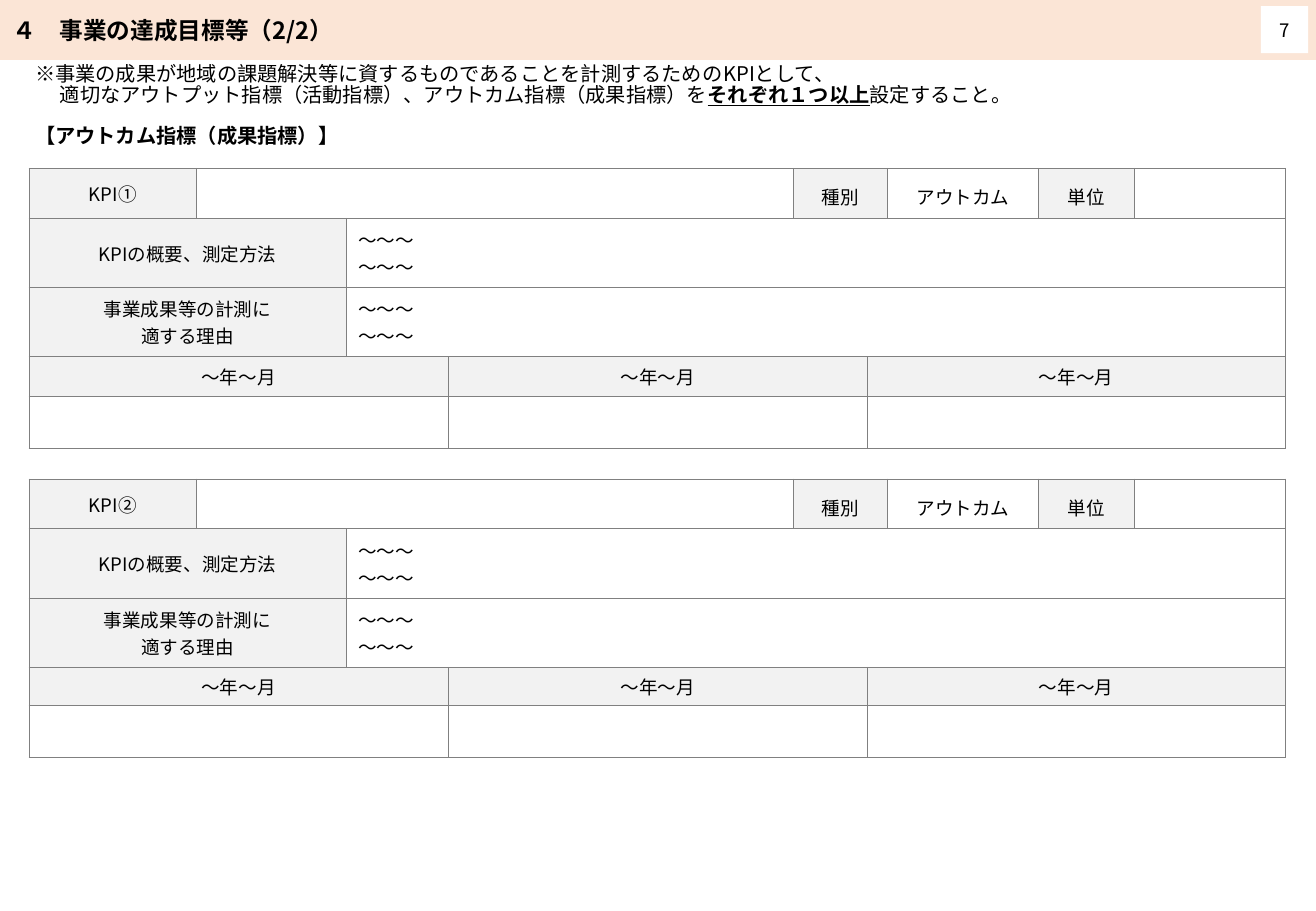
from lxml import etree
from pptx import Presentation
from pptx import util as u
from pptx.dml import color
from pptx.enum import shapes, text
from pptx.oxml import ns

Pt = u.Pt
MID = text.MSO_ANCHOR.MIDDLE
LEFT, CENTER = text.PP_ALIGN.LEFT, text.PP_ALIGN.CENTER
FONT, INK, GREY, RULE = "Noto Sans CJK JP", "000000", "F2F2F2", "808080"
COLS = [99.4, 88.6, 60.5, 204.5, 43.9, 12.2, 89.3, 56.9, 89.3]
WIDE = 745


def rgb(code):
    return color.RGBColor.from_string(code)


class Page:
    """Style and current slide."""

    def __init__(self, deck):
        self.slide = deck.slides.add_slide(deck.slide_layouts[5])

    def put(self, frame, lines, size, align=LEFT, space=None, bold=False):
        # Each line is a list of (words, marked) runs
        for i, line in enumerate(lines):
            para = frame.paragraphs[0] if i == 0 else frame.add_paragraph()
            para.alignment = align
            if space:
                para.line_spacing = space
            for words, mark in line:
                run = para.add_run()
                run.text = words
                font = run.font
                font.size, font.bold, font.underline = Pt(size), bold or mark, mark
                font.color.rgb = rgb(INK)
                font.name = FONT
                props = run._r.get_or_add_rPr()
                etree.SubElement(props, ns.qn("a:ea"), typeface=FONT)

    def title(self, words, w, h, fill):
        box = self.slide.shapes.title
        box.left, box.top, box.width, box.height = 0, 0, Pt(w), Pt(h)
        box.fill.solid()
        box.fill.fore_color.rgb = box.line.color.rgb = rgb(fill)
        box.line.width = Pt(1)
        box.text_frame.vertical_anchor = MID
        self.put(box.text_frame, [[(words, False)]], 14, bold=True)

    def note(self, top, h, lines, bold=False):
        box = self.slide.shapes.add_textbox(Pt(13.7), Pt(top), Pt(753), Pt(h))
        box.text_frame.word_wrap = True
        self.put(box.text_frame, lines, 12, space=0.85, bold=bold)
        return box

    def badge(self, words, x, y, side):
        box = self.slide.shapes.add_shape(
            shapes.MSO_SHAPE.RECTANGLE, Pt(x), Pt(y), Pt(side), Pt(side))
        box.shadow.inherit = False
        box.fill.solid()
        box.fill.fore_color.rgb = rgb("FFFFFF")
        box.line.fill.background()
        box.text_frame.vertical_anchor = MID
        self.put(box.text_frame, [[(words, False)]], 11, CENTER)

    def border(self, cell):
        props = cell._tc.get_or_add_tcPr()
        for i, side in enumerate(("lnL", "lnR", "lnT", "lnB")):
            line = etree.Element(ns.qn("a:" + side), w=str(Pt(0.5)))
            fill = etree.SubElement(line, ns.qn("a:solidFill"))
            etree.SubElement(fill, ns.qn("a:srgbClr"), val=RULE)
            props.insert(i, line)

    def table(self, top, rows, heights):
        grid = self.slide.shapes.add_table(
            len(rows), len(COLS), Pt(17.2), Pt(top), Pt(WIDE), Pt(sum(heights))).table
        grid.first_row = grid.horz_banding = False
        for col, w in zip(grid.columns, COLS):
            col.width = Pt(w)
        for row, h in zip(grid.rows, heights):
            row.height = Pt(h)
        for r, row in enumerate(rows):
            c = 0
            for span, lines, shade, align, space in row:
                cell = grid.cell(r, c)
                if span > 1:
                    cell.merge(grid.cell(r, c + span - 1))
                for part in range(c, c + span):
                    one = grid.cell(r, part)
                    one.fill.solid()
                    one.fill.fore_color.rgb = rgb(GREY if shade else "FFFFFF")
                    one.margin_top = one.margin_bottom = Pt(1)
                    self.border(one)
                cell.vertical_anchor = MID
                runs = [[(words, False)] for words in lines]
                self.put(cell.text_frame, runs, 11, align, space)
                c += span


def head(span, *lines, space=None):
    return span, lines, True, CENTER, space


def body(span, *lines, align=LEFT, space=None):
    return span, lines, False, align, space


def kpi(name):
    gap = Pt(20)
    thirds = (3, 2, 4)
    fill = "～～～"
    return [
        [head(1, name), body(3), head(2, "種別", space=gap),
         body(1, "アウトカム", align=CENTER, space=gap),
         head(1, "単位", space=gap), body(1)],
        [head(2, "KPIの概要、測定方法"), body(7, fill, fill)],
        [head(2, "事業成果等の計測に", "適する理由"), body(7, fill, fill)],
        [head(n, "～年～月") for n in thirds],
        [body(n) for n in thirds],
    ]


def main():
    deck = Presentation()
    deck.slide_width, deck.slide_height = Pt(780), Pt(540)
    page = Page(deck)

    # Heading band and page number
    page.title("４　事業の達成目標等（2/2）", 780, 35.3, "FBE5D6")
    page.badge("7", 747.4, 3.6, 28)

    # Guidance
    guide = page.note(35.3, 36, [
        [("※事業の成果が地域の課題解決等に資するものであることを計測するためのKPIとして、", False)],
        [("適切なアウトプット指標（活動指標）、アウトカム指標（成果指標）を", False),
         ("それぞれ１つ以上", True), ("設定すること。", False)],
    ])
    second = guide.text_frame.paragraphs[1]
    second._p.get_or_add_pPr().set("marL", str(Pt(14.7)))
    page.note(72, 21.6, [[("【アウトカム指標（成果指標）】", False)]], bold=True)

    # KPI tables
    for name, top, date in (("KPI①", 99.8, 23.6), ("KPI②", 283.9, 22.6)):
        page.table(top, kpi(name), [29.6, 41, 41, date, 31])

    deck.save("out.pptx")


if __name__ == "__main__":
    main()
